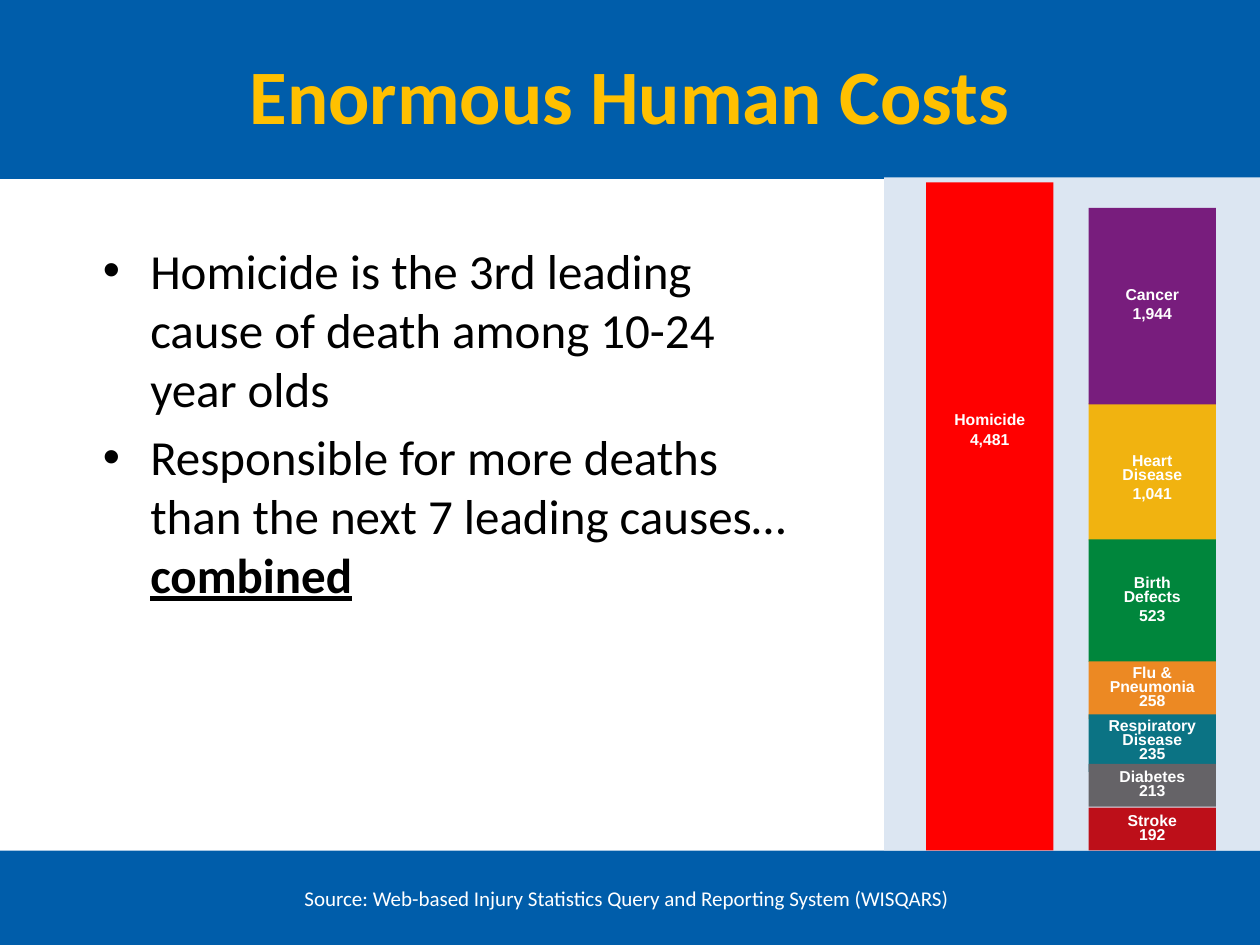
from dataclasses import dataclass

from lxml import etree
from pptx import Presentation
from pptx.dml.color import RGBColor
from pptx.enum import shapes, text
from pptx.oxml import ns
from pptx.util import Pt

SLIDE_W, SLIDE_H = 720, 540
BLUE, GOLD, PALE, WHITE, BLACK = "005DAA", "FFC000", "DCE6F2", "FFFFFF", "000000"
HEADER_H, FOOTER_TOP = 102.25, 486
BAR_W = 72.75
HOMICIDE_LEFT, OTHERS_LEFT = 529.2, 622.1


@dataclass
class Bar:
    """One cause of death; label_drop is the gap from bar top to label."""
    name_lines: list[str]
    deaths: str
    color: str
    left: float
    top: float
    height: float
    label_drop: float
    name_gap: float = 0


BARS = [
    Bar(["Heart", "Disease"], "1,041", "F1B310", OTHERS_LEFT, 230.4, 78.4, 30, 3),
    Bar(["Birth", "Defects"], "523", "00863C", OTHERS_LEFT, 308.2, 70, 21.7, 3),
    Bar(["Flu & Pneumonia"], "258", "EC8923", OTHERS_LEFT, 378, 33, 3.6),
    Bar(["Respiratory Disease"], "235", "0B7384", OTHERS_LEFT, 408.2, 33, 3.6),
    Bar(["Stroke"], "192", "BD0F19", OTHERS_LEFT, 461.5, 24.5, 4.4),
    Bar(["Diabetes"], "213", "656367", OTHERS_LEFT, 436.5, 24.5, 4.4),
    Bar(["Cancer"], "1,944", "781D7D", OTHERS_LEFT, 118.8, 112.3, 46.5, 3),
    Bar(["Homicide"], "4,481", "FF0000", HOMICIDE_LEFT, 104.2, 381.8, 133, 3),
]


def rgb(hex_color: str) -> RGBColor:
    return RGBColor.from_string(hex_color)


def add_block(slide, left: float, top: float, width: float, height: float, color: str):
    block = slide.shapes.add_shape(shapes.MSO_SHAPE.RECTANGLE,
                                   Pt(left), Pt(top), Pt(width), Pt(height))
    block.shadow.inherit = False
    block.fill.solid()
    block.fill.fore_color.rgb = rgb(color)
    block.line.fill.background()
    return block


def add_text_frame(slide, left: float, top: float, width: float, height: float):
    frame = slide.shapes.add_textbox(Pt(left), Pt(top), Pt(width), Pt(height)).text_frame
    frame.word_wrap = True
    return frame


def write(paragraph, words: str, *, size: float, color: str, font: str = "Calibri",
          bold: bool = False, underline: bool = False, centered: bool = False,
          line: float | None = None, after: float = 0) -> None:
    if centered:
        paragraph.alignment = text.PP_ALIGN.CENTER
    if line:
        paragraph.line_spacing = Pt(line)
    if after:
        paragraph.space_after = Pt(after)
    run = paragraph.add_run()
    run.text = words
    run.font.name, run.font.size = font, Pt(size)
    run.font.bold, run.font.underline = bold, underline
    run.font.color.rgb = rgb(color)


def add_bullet(paragraph) -> None:
    paragraph.space_before = Pt(5.6)
    properties = paragraph._p.get_or_add_pPr()
    properties.set("marL", str(Pt(27)))
    properties.set("indent", str(-Pt(27)))
    etree.SubElement(properties, ns.qn("a:buFont")).set("typeface", "Arial")
    etree.SubElement(properties, ns.qn("a:buChar")).set("char", "•")


def draw_bar(slide, bar: Bar) -> None:
    frame = add_block(slide, bar.left, bar.top, BAR_W, bar.height, bar.color).text_frame
    frame.word_wrap = True
    frame.vertical_anchor = text.MSO_ANCHOR.TOP
    frame.margin_top, frame.margin_bottom = Pt(bar.label_drop), 0
    lines = [*bar.name_lines, bar.deaths]
    for index, words in enumerate(lines):
        paragraph = frame.add_paragraph() if index else frame.paragraphs[0]
        last_name = index == len(lines) - 2
        write(paragraph, words, size=9, color=WHITE, font="Arial", bold=True,
              centered=True, line=8, after=bar.name_gap if last_name else 0)


def main() -> None:
    deck = Presentation()
    deck.slide_width, deck.slide_height = Pt(SLIDE_W), Pt(SLIDE_H)
    slide = deck.slides.add_slide(deck.slide_layouts[6])

    add_block(slide, 0, FOOTER_TOP, SLIDE_W, SLIDE_H - FOOTER_TOP, BLUE)
    add_block(slide, 0, 0, SLIDE_W, HEADER_H, BLUE)
    add_block(slide, 505.3, 101.4, SLIDE_W - 505.3, FOOTER_TOP - 101.4, PALE)

    title = add_text_frame(slide, 36, 23.6, 648, 61)
    write(title.paragraphs[0], "Enormous Human Costs", size=44, color=GOLD,
          bold=True, centered=True)

    body = add_text_frame(slide, 51.8, 133.9, 411.2, 329.8)
    ranking, comparison = body.paragraphs[0], body.add_paragraph()
    for point in (ranking, comparison):
        add_bullet(point)
    write(ranking, "Homicide is the 3rd leading cause of death among 10-24 year olds",
          size=28, color=BLACK)
    write(comparison, "Responsible for more deaths than the next 7 leading causes…",
          size=28, color=BLACK)
    write(comparison, "combined", size=28, color=BLACK, bold=True, underline=True)

    source = add_text_frame(slide, 30.2, 502.6, 655.9, 21.8)
    write(source.paragraphs[0],
          "Source: Web-based Injury Statistics Query and Reporting System (WISQARS)",
          size=12, color=WHITE, centered=True)

    for bar in BARS:
        draw_bar(slide, bar)

    deck.save("out.pptx")


if __name__ == "__main__":
    main()
